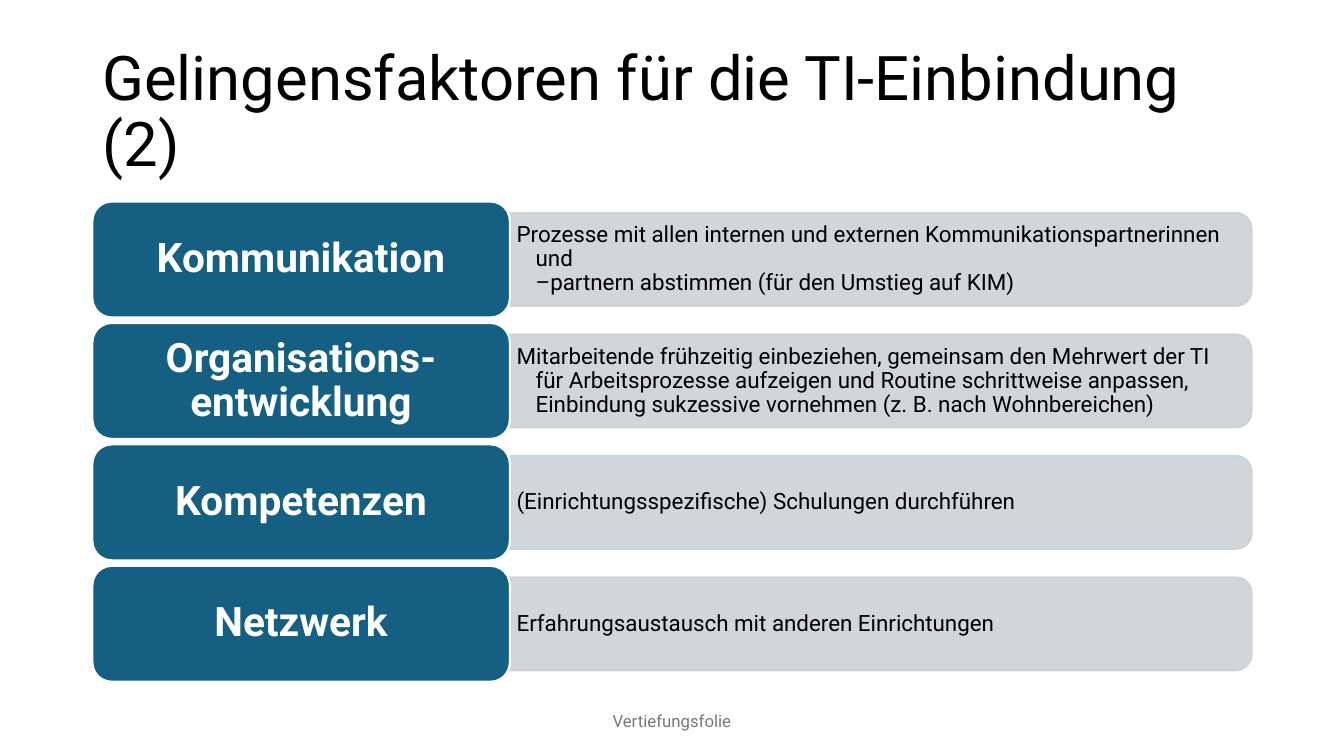
from lxml import etree
from pptx import Presentation
from pptx import util as u
from pptx.dml.color import RGBColor
from pptx.enum import shapes, text
from pptx.oxml.ns import qn

FONT = "Roboto"
COLORS = {
    "text": "000000",
    "label": "156082",
    "bar": "CCD2D8",
    "white": "FFFFFF",
    "footer": "797979",
}
FACTORS = [
    ("Kommunikation",
     "Prozesse mit allen internen und externen Kommunikationspartnerinnen und \n"
     "–partnern abstimmen (für den Umstieg auf KIM)"),
    ("Organisations-entwicklung",
     "Mitarbeitende frühzeitig einbeziehen, gemeinsam den Mehrwert der TI "
     "für Arbeitsprozesse aufzeigen und Routine schrittweise anpassen, "
     "Einbindung sukzessive vornehmen (z. B. nach Wohnbereichen)"),
    ("Kompetenzen", "(Einrichtungsspezifische) Schulungen durchführen"),
    ("Netzwerk", "Erfahrungsaustausch mit anderen Einrichtungen"),
]

# Row geometry in centimetres
ROWS_TOP, ROW_PITCH = 5.08, 3.06
LABEL_LEFT, LABEL_WIDTH, LABEL_HEIGHT = 2.33, 10.52, 2.92
BAR_WIDTH, BAR_HEIGHT = 18.69, 2.34
DETAIL_WIDTH, DETAIL_HEIGHT = 18.59, 2.11


def rgb(name):
    return RGBColor.from_string(COLORS[name])


def write_text(shape, content, size, color="text", bold=False, align="LEFT",
               spacing=0.9, insets=(0.25, 0.13), hanging=0):
    frame = shape.text_frame
    frame.word_wrap = True
    frame.vertical_anchor = text.MSO_ANCHOR.MIDDLE
    frame.margin_left = frame.margin_right = u.Cm(insets[0])
    frame.margin_top = frame.margin_bottom = u.Cm(insets[1])
    paragraph = frame.paragraphs[0]
    paragraph.text = content
    paragraph.alignment = text.PP_ALIGN[align]
    paragraph.line_spacing = spacing
    if hanging:
        properties = paragraph._p.get_or_add_pPr()
        properties.set("marL", str(u.Cm(hanging)))
        properties.set("indent", str(-u.Cm(hanging)))
    for run in paragraph.runs:
        run.font.name = FONT
        run.font.size = u.Pt(size)
        run.font.bold = bold
        run.font.color.rgb = rgb(color)
    # Line breaks take the size of the text around them
    for line_break in paragraph._p.findall(qn("a:br")):
        etree.SubElement(line_break, qn("a:rPr")).set("sz", str(size * 100))


def add_text(slide, left, top, width, height, content, size, **style):
    box = slide.shapes.add_textbox(u.Cm(left), u.Cm(top), u.Cm(width), u.Cm(height))
    write_text(box, content, size, **style)


def add_block(slide, kind, left, top, width, height, fill, line, opacity=100):
    shape = slide.shapes.add_shape(
        kind, u.Cm(left), u.Cm(top), u.Cm(width), u.Cm(height))
    shape.shadow.inherit = False
    shape.fill.solid()
    shape.fill.fore_color.rgb = rgb(fill)
    shape.line.color.rgb = rgb(line)
    shape.line.width = u.Pt(1.5)
    if opacity < 100:
        for color in shape._element.spPr.iter(qn("a:srgbClr")):
            etree.SubElement(color, qn("a:alpha")).set("val", str(opacity * 1000))
    return shape


def add_factor(slide, top, label, detail):
    middle = top + LABEL_HEIGHT / 2
    bar_left = LABEL_LEFT + LABEL_WIDTH

    # Bar: turned a quarter so that its rounded corners face right
    bar = add_block(slide, shapes.MSO_SHAPE.ROUND_2_SAME_RECTANGLE,
                    bar_left + (BAR_WIDTH - BAR_HEIGHT) / 2, middle - BAR_WIDTH / 2,
                    BAR_HEIGHT, BAR_WIDTH, "bar", "bar", opacity=90)
    bar.rotation = 90
    add_text(slide, bar_left, middle - DETAIL_HEIGHT / 2, DETAIL_WIDTH, DETAIL_HEIGHT,
             detail, 16, insets=(0.17, 0.08), hanging=0.48)

    # Label
    block = add_block(slide, shapes.MSO_SHAPE.ROUNDED_RECTANGLE, LABEL_LEFT, top,
                      LABEL_WIDTH, LABEL_HEIGHT, "label", "white")
    write_text(block, label, 29, color="white", bold=True, align="CENTER",
               insets=(0.3, 0.15))


def main():
    presentation = Presentation()
    presentation.slide_width = u.Cm(33.87)
    presentation.slide_height = u.Cm(19.05)
    slide = presentation.slides.add_slide(presentation.slide_layouts[6])

    # Title
    add_text(slide, 2.33, 1.02, 29.21, 3.68,
             "Gelingensfaktoren für die TI-Einbindung (2)", 44)

    # Success factors
    for index, (label, detail) in enumerate(FACTORS):
        add_factor(slide, ROWS_TOP + index * ROW_PITCH, label, detail)

    # Footer
    add_text(slide, 11.22, 17.66, 11.43, 1.01, "Vertiefungsfolie", 12,
             color="footer", align="CENTER", spacing=1.0)

    presentation.save("out.pptx")


if __name__ == "__main__":
    main()
